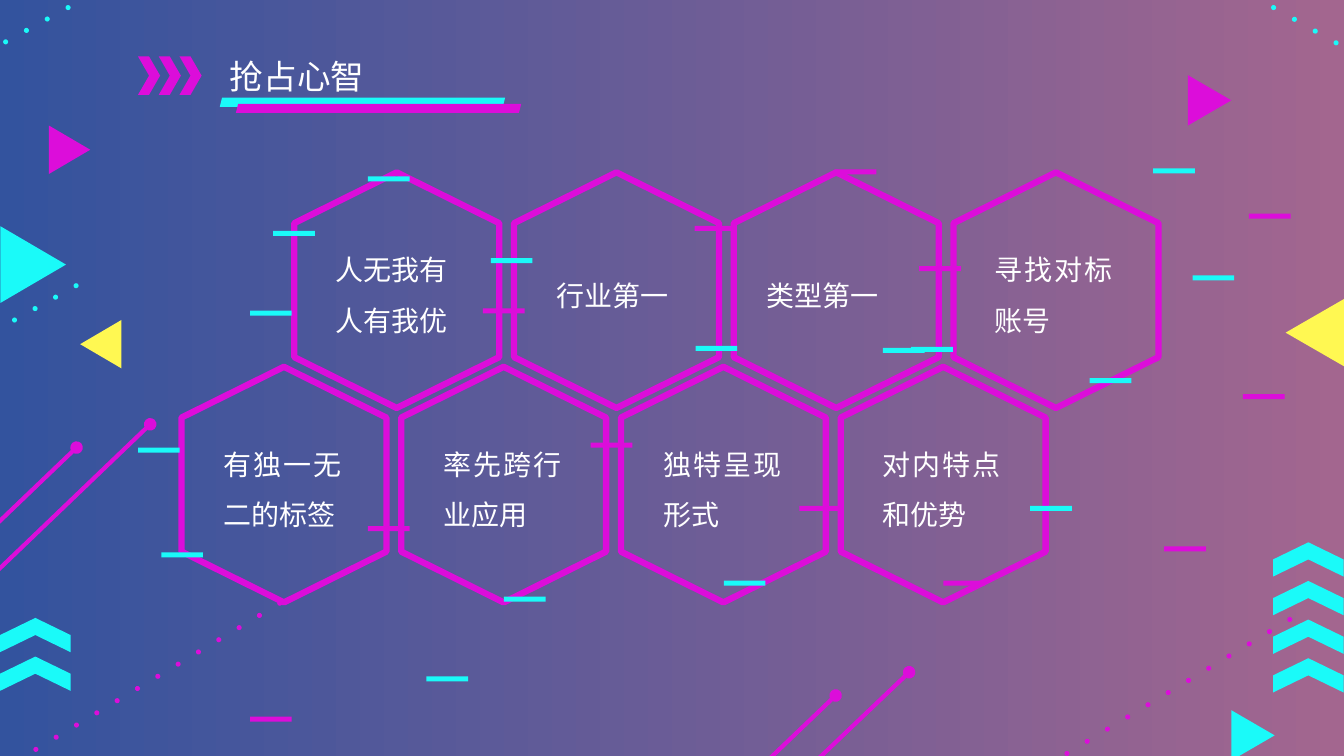
"""Build the slide of eight hexagons on a neon gradient."""
from lxml import etree
from pptx import Presentation
from pptx.dml.color import RGBColor
from pptx.enum.shapes import MSO_CONNECTOR, MSO_SHAPE
from pptx.enum.text import MSO_ANCHOR, MSO_AUTO_SIZE, PP_ALIGN
from pptx.oxml.ns import qn
from pptx.util import Pt

RECT = MSO_SHAPE.RECTANGLE
DOT = MSO_SHAPE.OVAL
WEDGE = MSO_SHAPE.ISOSCELES_TRIANGLE
ARROW = MSO_SHAPE.CHEVRON
SLANT = MSO_SHAPE.PARALLELOGRAM
LINE = MSO_CONNECTOR.STRAIGHT
JUST = PP_ALIGN.JUSTIFY
TOP = MSO_ANCHOR.TOP
FIXED = MSO_AUTO_SIZE.NONE

FONT = "Noto Sans CJK SC"
COLORS = {"pink": "DC0DDA", "cyan": "1AFAF9", "gold": "FFF852",
          "white": "FFFFFF", "left": "33539E", "right": "A3668F"}


class Deck:
    """Hold the style and the current slide."""

    def __init__(self):
        """Open a wide deck with one titled slide."""
        self.file = Presentation()
        self.file.slide_width, self.file.slide_height = Pt(960), Pt(540)
        self.slide = self.file.slides.add_slide(self.file.slide_layouts[5])
        self.shapes = self.slide.shapes

    def color(self, name):
        """Return the named colour."""
        return RGBColor.from_string(COLORS[name])

    def ground(self, *names):
        """Fill the background from left to right."""
        fill = self.slide.background.fill
        fill.gradient()
        fill.gradient_angle = 0
        for spot, (stop, name) in enumerate(zip(fill.gradient_stops, names)):
            stop.position = spot
            stop.color.rgb = self.color(name)

    def shape(self, kind, x, y, w, h, color, turn=0):
        """Add a plain filled shape."""
        item = self.shapes.add_shape(kind, Pt(x), Pt(y), Pt(w), Pt(h))
        item.shadow.inherit = False
        item.fill.solid()
        item.fill.fore_color.rgb = self.color(color)
        item.line.fill.background()
        item.rotation = turn

    def dots(self, x, y, count, dx, dy, color):
        """Add a slanting row of dots."""
        for i in range(count):
            self.shape(DOT, x + i * dx, y + i * dy, 3.6, 3.6, color)

    def hexagon(self, x, y, w=146.4, h=168.3, rise=36.3):
        """Add an open hexagon that stands on its point."""
        spots = [(w / 2, 0), (w, rise), (w, h - rise),
                 (w / 2, h), (0, h - rise), (0, rise)]
        spots = [(Pt(x + dx), Pt(y + dy)) for dx, dy in spots]
        form = self.shapes.build_freeform(*spots[0], scale=1.0)
        form.add_line_segments(spots[1:], close=True)
        item = form.convert_to_shape()
        item.shadow.inherit = False
        item.fill.background()
        item.line.color.rgb = self.color("pink")
        item.line.width = Pt(4.5)

    def rod(self, *ends):
        """Add a line with round ends."""
        item = self.shapes.add_connector(LINE, *map(Pt, ends))
        item.line.color.rgb = self.color("pink")
        item.line.width = Pt(3)
        line = item._element.spPr.find(qn("a:ln"))
        for end in ("headEnd", "tailEnd"):
            etree.SubElement(line, qn(f"a:{end}"), type="oval")
        etree.SubElement(item._element.spPr, qn("a:effectLst"))

    def put(self, text, item, size=20, space=1.5, color="white", align=JUST):
        """Put text into a shape, one paragraph a line."""
        frame = item.text_frame
        frame.text = text
        frame.word_wrap = True
        frame.auto_size = FIXED
        frame.vertical_anchor = TOP
        for para in frame.paragraphs:
            para.alignment = align
            para.line_spacing = space
            for run in para.runs:
                run.font.size = Pt(size)
                run.font.name = FONT
                run.font.color.rgb = self.color(color)
                etree.SubElement(run._r.get_or_add_rPr(), qn("a:ea"), typeface=FONT)

    def title(self, text, x, y, w, h):
        """Move and fill the title."""
        item = self.shapes.title
        item.left, item.top, item.width, item.height = map(Pt, (x, y, w, h))
        self.put(text, item, size=24, space=1.0)

    def label(self, text, x, y, h=75.6):
        """Add the text of a hexagon."""
        self.put(text, self.shapes.add_textbox(Pt(x), Pt(y), Pt(98.6), Pt(h)))


PITCH = 156.96
UPPER = [("人无我有\n人有我优", 232.6, 164.9, 75.6), ("行业第一", 390.2, 183.6, 39.6),
         ("类型第一", 540.7, 183.6, 39.6), ("寻找对标账号", 703.4, 164.9, 79.9)]
LOWER = ["有独一无二的标签", "率先跨行业应用", "独特呈现形式", "对内特点和优势"]
WEDGES = [(-3.6, 165.6, 54.7, 46.8, "cyan", 90), (915.1, 216.7, 48.2, 41.8, "gold", 270),
          (877, 509.8, 36, 31, "cyan", 90), (32.4, 92.2, 34.6, 29.5, "pink", 90),
          (846, 56.2, 36, 31, "pink", 90), (54.7, 231.1, 34.6, 29.5, "gold", 270)]
DOTS = [(8.6, 226.8, 4, 14.64, -8.16, "cyan"), (23.8, 533.5, 13, 14.52, -8.7, "pink"),
        (2.2, 28.1, 4, 14.88, -8.16, "cyan"), (760.3, 536.4, 12, 14.47, -8.7, "pink"),
        (907.9, 3.6, 4, 14.88, 8.4, "cyan")]
RODS = [(-11.5, 383, 54.7, 319.7), (-13, 418.3, 107.3, 303.1),
        (530.6, 560.2, 596.9, 496.8), (529.2, 594.7, 649.4, 480.2)]
STACKS = [(13, 428.4, 2), (922.3, 374.4, 4)]
DASHES = {
    "pink": [(887.8, 281.5), (831.6, 390.2), (892.1, 152.6), (178.6, 511.9),
             (673.9, 414.7), (571, 361.4), (421.9, 316.1), (262.8, 375.8),
             (344.9, 220.3), (496.1, 161.3), (596.2, 121), (656.6, 190.1)],
    "cyan": [(823.7, 120.2), (851.8, 196.6), (304.6, 483.1), (195.1, 164.9),
             (262.8, 126), (178.6, 221.8), (98.6, 319.7), (115.2, 394.6),
             (360, 426.2), (517, 414.7), (350.6, 184.3), (496.8, 247),
             (630.7, 248.4), (650.9, 247.7), (778.3, 270), (735.8, 361.4)],
}


def main():
    """Draw the slide and save it."""
    deck = Deck()
    deck.ground("left", "right")
    deck.title("抢占心智", 157, 36, 203.8, 36)
    for i in range(4):
        deck.hexagon(129.6 + i * PITCH, 262)
        deck.hexagon(210.2 + i * PITCH, 123.1)
    for wedge in WEDGES:
        deck.shape(WEDGE, *wedge)
    for row in DOTS:
        deck.dots(*row)
    for ends in RODS:
        deck.rod(*ends)
    for x, y, count in STACKS:
        for i in range(count):
            deck.shape(ARROW, x, y + i * 27.6, 24.5, 50.4, "cyan", 270)
    for i in range(3):
        deck.shape(ARROW, 98.6 + i * 14.8, 40.3, 15.8, 27.4, "pink")
    deck.shape(SLANT, 157, 69.8, 203.8, 6.5, "cyan")
    deck.shape(SLANT, 168.5, 74.2, 203.8, 6.5, "pink")
    for label in UPPER:
        deck.label(*label)
    for i, text in enumerate(LOWER):
        deck.label(text, 152.6 + i * PITCH, 303.8)
    for color, spots in DASHES.items():
        for x, y in spots:
            deck.shape(RECT, x, y, 29.8, 3.6, color)
    deck.file.save("out.pptx")


if __name__ == "__main__":
    main()
